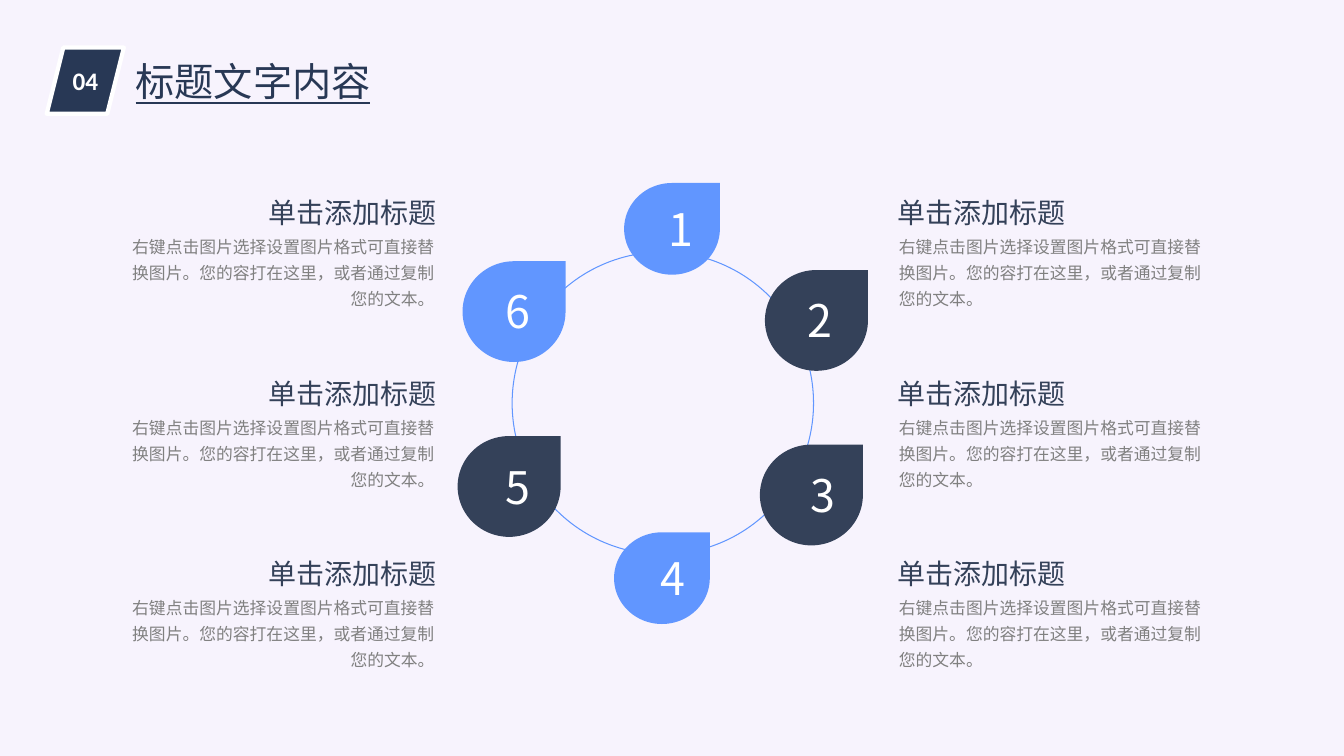
import pptx
import pptx.util
import pptx.dml.color
import pptx.enum.shapes
import pptx.enum.text
import lxml.etree

Pt = pptx.util.Pt
SHAPE = pptx.enum.shapes.MSO_SHAPE
ALIGN = pptx.enum.text.PP_ALIGN
ANCHOR = pptx.enum.text.MSO_ANCHOR
FIT = pptx.enum.text.MSO_AUTO_SIZE

COLORS = {"paper": "F7F3FD", "ink": "283855", "navy": "344159",
          "blue": "6196FF", "gray": "808080", "white": "FFFFFF"}
CJK = "Noto Sans CJK SC"
DRAWING = "{http://schemas.openxmlformats.org/drawingml/2006/main}"


def color(name):
    return pptx.dml.color.RGBColor.from_string(COLORS[name])


def write(box, text, size, tint, align=ALIGN.LEFT, typeface=CJK, spacing=1.0,
          inset=(7.2, 3.6)):
    frame = box.text_frame
    frame.text = text
    frame.word_wrap = True
    frame.auto_size = FIT.SHAPE_TO_FIT_TEXT
    frame.margin_left = frame.margin_right = Pt(inset[0])
    frame.margin_top = frame.margin_bottom = Pt(inset[1])
    paragraph = frame.paragraphs[0]
    paragraph.alignment = align
    paragraph.line_spacing = spacing
    run = paragraph.runs[0]
    run.font.size = Pt(size)
    run.font.color.rgb = color(tint)
    run.font.name = typeface
    east_asian = lxml.etree.SubElement(run.font._element, DRAWING + "ea")
    east_asian.set("typeface", typeface)
    return run


deck = pptx.Presentation()
deck.slide_width, deck.slide_height = Pt(960), Pt(540)
slide = deck.slides.add_slide(deck.slide_layouts[5])
slide.background.fill.solid()
slide.background.fill.fore_color.rgb = color("paper")
shapes = slide.shapes

section_badge = shapes.add_shape(SHAPE.PARALLELOGRAM, Pt(33.4), Pt(34), Pt(55.1), Pt(47.3))
section_badge.shadow.inherit = False
section_badge.fill.solid()
section_badge.fill.fore_color.rgb = color("ink")
section_badge.line.color.rgb = color("white")
section_badge.line.width = Pt(3)
write(section_badge, "04", 18, "white", ALIGN.CENTER, "Calibri").font.bold = True
section_badge.text_frame.auto_size = FIT.NONE
section_badge.text_frame.vertical_anchor = ANCHOR.MIDDLE

heading = shapes.title
heading.left, heading.top, heading.width, heading.height = Pt(88.6), Pt(37.4), Pt(184.3), Pt(41.2)
write(heading, "标题文字内容", 28, "ink", ALIGN.CENTER).font.underline = True
heading.text_frame.vertical_anchor = ANCHOR.MIDDLE

for detail_left, caption_left, side in [(635, 626.4, ALIGN.LEFT), (76.3, 87.1, ALIGN.RIGHT)]:
    for row in range(3):
        caption_top = 125.3 + row * 128.9
        detail = shapes.add_textbox(Pt(detail_left), Pt(caption_top + 36), Pt(241.2), Pt(64.1))
        write(detail, "右键点击图片选择设置图片格式可直接替换图片。您的容打在这里，或者通过复制您的文本。",
              12, "gray", side, spacing=1.3)
        caption = shapes.add_textbox(Pt(caption_left), Pt(caption_top), Pt(239), Pt(43.2))
        write(caption, "单击添加标题", 20, "navy", side, spacing=1.3, inset=(14.4, 7.2))

ring = shapes.add_shape(SHAPE.OVAL, Pt(365.8), Pt(180), Pt(215.3), Pt(216))
ring.shadow.inherit = False
ring.fill.background()
ring.line.color.rgb = color("blue")
ring.line.width = Pt(0)

small, large = (68.4, 65.5), (73.6, 72)
steps = [
    (445.8, 130.7, small, "blue", 470.2, 140.4),
    (546.4, 192.9, large, "navy", 569.5, 205.9),
    (542.8, 317.6, large, "navy", 571.7, 330.5),
    (438.6, 380.2, small, "blue", 464.4, 389.5),
    (326.9, 311.5, large, "navy", 354.2, 324.7),
    (330.4, 186.6, large, "blue", 354.2, 199.4),
]
for number, (left, top, (width, height), tint, digit_left, digit_top) in enumerate(steps, 1):
    drop = shapes.add_shape(SHAPE.TEAR, Pt(left), Pt(top), Pt(width), Pt(height))
    drop.shadow.inherit = False
    drop.fill.solid()
    drop.fill.fore_color.rgb = color(tint)
    drop.line.fill.background()
    digit = shapes.add_textbox(Pt(digit_left), Pt(digit_top), Pt(18.5), Pt(46.1))
    write(digit, str(number), 32, "white")

deck.save("out.pptx")
